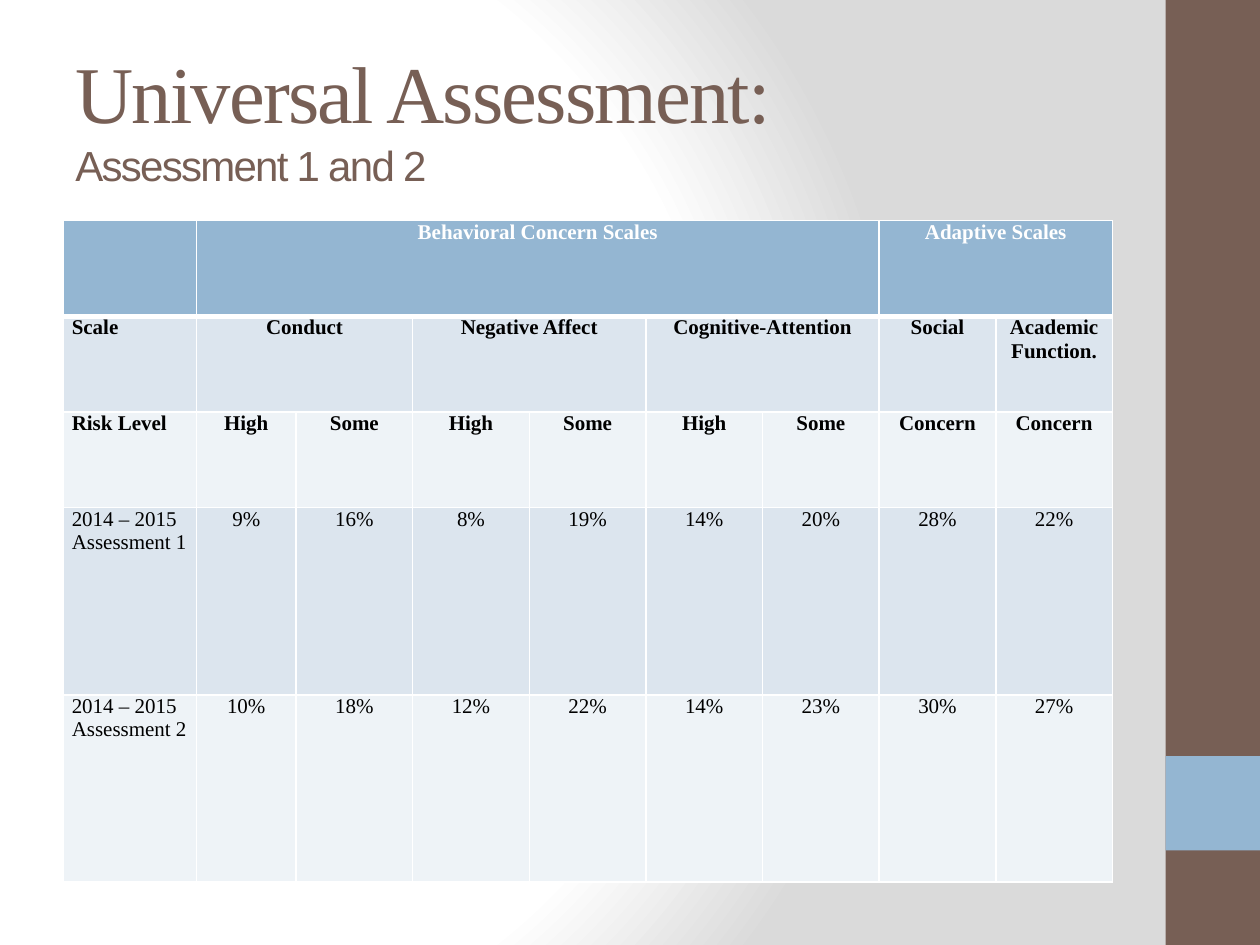
"""Build the universal assessment slide with its table of risk levels."""
import dataclasses
import typing

import lxml.etree
import pptx
import pptx.dml.color
import pptx.enum.shapes
import pptx.enum.text
import pptx.oxml.ns
import pptx.util

RGBColor = pptx.dml.color.RGBColor
BROWN = RGBColor(0x77, 0x5F, 0x55)
BLUE = RGBColor(0x94, 0xB6, 0xD2)
WHITE = RGBColor(0xFF, 0xFF, 0xFF)
BLACK = RGBColor(0x00, 0x00, 0x00)
GRAY = RGBColor(0xDA, 0xDA, 0xDA)
BAND_DARK = RGBColor(0xDC, 0xE5, 0xEE)
BAND_LIGHT = RGBColor(0xEE, 0xF3, 0xF7)

SLIDE_WIDTH, SLIDE_HEIGHT = pptx.util.Inches(10), pptx.util.Inches(7.5)
CONTENT_LEFT, CONTENT_WIDTH = 0.5, 8.33
TABLE_TOP, TABLE_HEIGHT = 1.75, 5.25
LABEL_WIDTH, FIRST_VALUE_WIDTH = 1.06, 0.79
VALUE_WIDTH = (CONTENT_WIDTH - LABEL_WIDTH - FIRST_VALUE_WIDTH) / 7
COLUMN_WIDTHS = [LABEL_WIDTH, FIRST_VALUE_WIDTH] + [VALUE_WIDTH] * 7
HEADING_HEIGHT = 0.76
SCORE_HEIGHT = (TABLE_HEIGHT - 3 * HEADING_HEIGHT) / 2
ROW_HEIGHTS = [HEADING_HEIGHT] * 3 + [SCORE_HEIGHT] * 2
SERIF, SANS = "Times New Roman", "Arial"
DRAWING = "http://schemas.openxmlformats.org/drawingml/2006/main"


@dataclasses.dataclass(frozen=True)
class Band:
    """A sidebar block, given as shares of the slide's size."""
    left: float
    top: float
    width: float
    height: float
    color: RGBColor


@dataclasses.dataclass(frozen=True)
class TableRow:
    """One table row with its texts, the columns each spans, and its look."""
    texts: typing.Sequence[str]
    fill: RGBColor
    spans: typing.Sequence[int] = (1,) * 9
    color: RGBColor = BLACK
    bold: bool = False
    top_line: float = 1
    bottom_line: float = 1


BANDS = [
    Band(0.925, 0, 0.075, 1, BROWN),
    Band(0.925, 0.8, 0.075, 0.1, BLUE),
]
ROWS = [
    TableRow(["", "Behavioral Concern Scales", "Adaptive Scales"], BLUE,
             spans=(1, 6, 2), color=WHITE, bold=True, bottom_line=3),
    TableRow(["Scale", "Conduct", "Negative Affect", "Cognitive-Attention",
              "Social", "Academic Function."], BAND_DARK,
             spans=(1, 2, 2, 2, 1, 1), bold=True, top_line=3),
    TableRow(["Risk Level"] + ["High", "Some"] * 3 + ["Concern"] * 2,
             BAND_LIGHT, bold=True),
    TableRow(["2014 – 2015\nAssessment 1", "9%", "16%", "8%", "19%", "14%",
              "20%", "28%", "22%"], BAND_DARK),
    TableRow(["2014 – 2015\nAssessment 2", "10%", "18%", "12%", "22%", "14%",
              "23%", "30%", "27%"], BAND_LIGHT),
]


def add_element(parent, tag: str, **attributes: str):
    """Append a DrawingML element and return it."""
    return lxml.etree.SubElement(parent, f"{{{DRAWING}}}{tag}", attributes)


def add_text(paragraph, text: str, *, font: str, size: float, color: RGBColor,
             bold: bool = False, spacing: float = 0) -> None:
    """Add one formatted run to a paragraph."""
    run = paragraph.add_run()
    run.text = text
    run.font.name = font
    run.font.size = pptx.util.Pt(size)
    run.font.color.rgb = color
    run.font.bold = bold
    if spacing:
        run.font._element.set("spc", str(round(spacing * 100)))


def set_background(slide) -> None:
    """Give the slide a radial gradient from white to gray."""
    slide.background.fill.solid()
    solid = slide.element.find(f".//{pptx.oxml.ns.qn('p:bgPr')}/{{{DRAWING}}}solidFill")
    gradient = lxml.etree.Element(f"{{{DRAWING}}}gradFill", rotWithShape="1")
    stops = add_element(gradient, "gsLst")
    for position, color in ((0, WHITE), (75, WHITE), (100, GRAY)):
        stop = add_element(stops, "gs", pos=str(position * 1000))
        add_element(stop, "srgbClr", val=str(color))
    circle = add_element(gradient, "path", path="circle")
    add_element(circle, "fillToRect", l="20000", t="50000", r="100000", b="50000")
    solid.getparent().replace(solid, gradient)


def add_band(slide, band: Band) -> None:
    """Draw one sidebar block."""
    shape = slide.shapes.add_shape(
        pptx.enum.shapes.MSO_SHAPE.RECTANGLE,
        round(band.left * SLIDE_WIDTH), round(band.top * SLIDE_HEIGHT),
        round(band.width * SLIDE_WIDTH), round(band.height * SLIDE_HEIGHT))
    shape.shadow.inherit = False
    shape.fill.solid()
    shape.fill.fore_color.rgb = band.color
    shape.line.fill.background()


def add_title(slide) -> None:
    """Write the title and its second line."""
    box = slide.shapes.add_textbox(
        *map(pptx.util.Inches, (CONTENT_LEFT, 0.3, CONTENT_WIDTH, 1.25)))
    frame = box.text_frame
    frame.word_wrap = True
    frame.vertical_anchor = pptx.enum.text.MSO_ANCHOR.MIDDLE
    paragraph = frame.paragraphs[0]
    add_text(paragraph, "Universal Assessment:", font=SERIF, size=46,
             color=BROWN, spacing=-1)
    paragraph.add_line_break()
    add_text(paragraph, "Assessment 1 and 2", font=SANS, size=24,
             color=BROWN, spacing=-1)


def style_cell(cell, row: TableRow) -> None:
    """Set the borders, fill and margins of a cell."""
    properties = cell._tc.get_or_add_tcPr()
    widths = {"lnL": 1, "lnR": 1, "lnT": row.top_line, "lnB": row.bottom_line}
    for tag, width in widths.items():
        line = add_element(properties, tag, w=str(pptx.util.Pt(width)))
        add_element(add_element(line, "solidFill"), "srgbClr", val=str(WHITE))
    cell.fill.solid()
    cell.fill.fore_color.rgb = row.fill
    cell.margin_left = cell.margin_right = pptx.util.Inches(0.07)
    cell.margin_top = cell.margin_bottom = 0


def fill_row(table, index: int, row: TableRow) -> None:
    """Style, merge and write the cells of one row."""
    for column in range(len(COLUMN_WIDTHS)):
        style_cell(table.cell(index, column), row)
    column = 0
    for text, span in zip(row.texts, row.spans):
        cell = table.cell(index, column)
        if span > 1:
            cell.merge(table.cell(index, column + span - 1))
        for number, line in enumerate(text.splitlines()):
            frame = cell.text_frame
            paragraph = frame.add_paragraph() if number else frame.paragraphs[0]
            if column:
                paragraph.alignment = pptx.enum.text.PP_ALIGN.CENTER
            add_text(paragraph, line, font=SERIF, size=12, color=row.color,
                     bold=row.bold)
        column += span


def add_score_table(slide) -> None:
    """Add the table of scales and risk levels."""
    frame = slide.shapes.add_table(
        len(ROWS), len(COLUMN_WIDTHS),
        *map(pptx.util.Inches, (CONTENT_LEFT, TABLE_TOP, CONTENT_WIDTH, TABLE_HEIGHT)))
    table = frame.table
    for column, width in zip(table.columns, COLUMN_WIDTHS):
        column.width = pptx.util.Inches(width)
    for table_row, height in zip(table.rows, ROW_HEIGHTS):
        table_row.height = pptx.util.Inches(height)
    for index, row in enumerate(ROWS):
        fill_row(table, index, row)


def main() -> None:
    """Build and save the presentation."""
    presentation = pptx.Presentation()
    presentation.slide_width = SLIDE_WIDTH
    presentation.slide_height = SLIDE_HEIGHT
    slide = presentation.slides.add_slide(presentation.slide_layouts[6])
    set_background(slide)
    for band in BANDS:
        add_band(slide, band)
    add_title(slide)
    add_score_table(slide)
    presentation.save("out.pptx")


if __name__ == "__main__":
    main()
